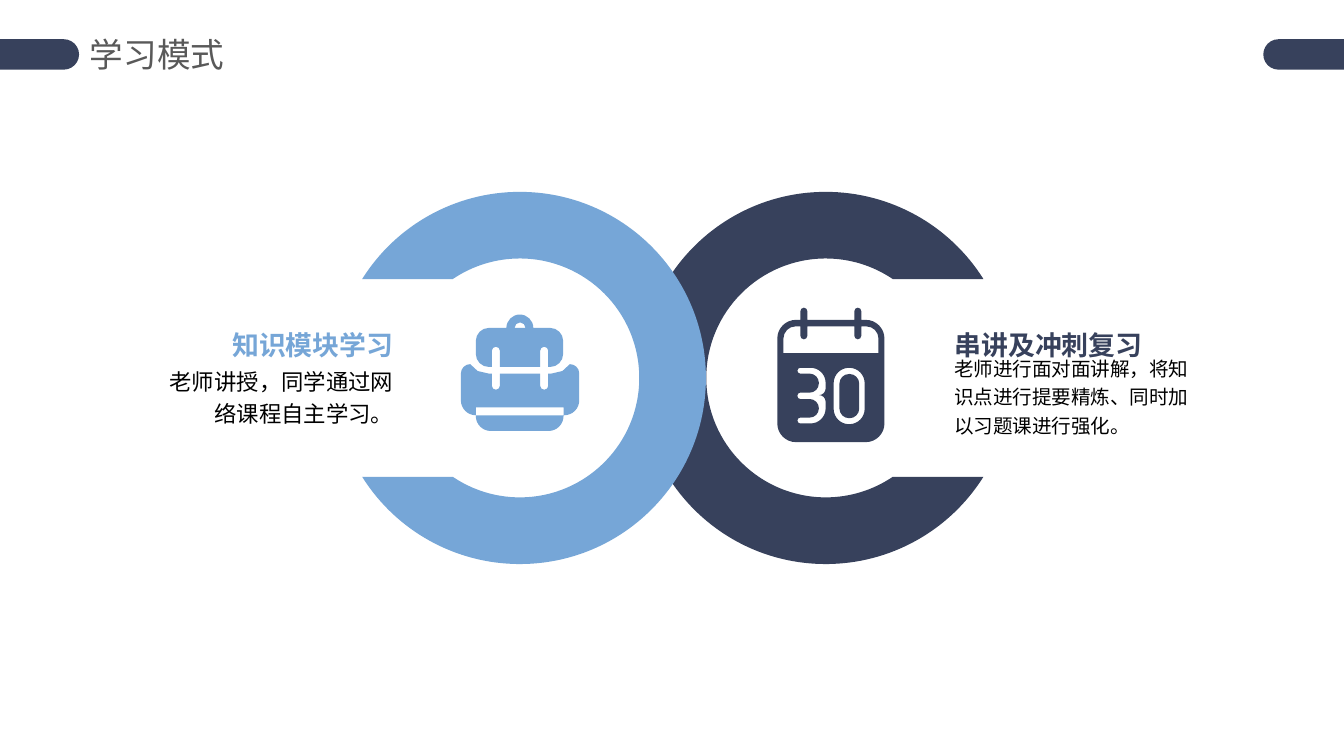
import math

from lxml import etree
from pptx import Presentation
from pptx.dml.color import RGBColor
from pptx.enum import shapes, text
from pptx.oxml import ns
from pptx.util import Pt

NAVY = RGBColor(0x37, 0x41, 0x5C)
BLUE = RGBColor(0x76, 0xA6, 0xD7)
GRAY = RGBColor(0x59, 0x59, 0x59)
BLACK = RGBColor(0, 0, 0)
FONT = "Noto Sans CJK SC"
LEFT, RIGHT = text.PP_ALIGN.LEFT, text.PP_ALIGN.RIGHT

OUTER_R, INNER_R, HALF_GAP = 99.7, 64, 53
KAPPA = 0.55  # handle length of a quarter circle

# Icon outlines: corners as (x, y, corner radius), in points from the icon's top left
CALENDAR = [
    # page with two binding posts
    [(0, 6.5, 10), (12.4, 6.5, 0), (12.4, 0, 1.8), (16.1, 0, 1.8), (16.1, 6.5, 0),
     (41.3, 6.5, 0), (41.3, 0, 1.8), (45, 0, 1.8), (45, 6.5, 0),
     (57.4, 6.5, 10), (57.4, 72, 10), (0, 72, 10)],
    # header window
    [(3.3, 24.3, 0), (3.3, 10, 6.5), (12.4, 10, 0), (12.4, 16.9, 1.8), (16.1, 16.9, 1.8),
     (16.1, 10, 0), (41.3, 10, 0), (41.3, 16.9, 1.8), (45, 16.9, 1.8), (45, 10, 0),
     (54.2, 10, 6.5), (54.2, 24.3, 0)],
    # digit 3
    [(10.8, 32.2, 1.5), (25.9, 32.2, 8), (25.9, 46.8, 3.5),
     (25.9, 46.8, 3.5), (25.9, 62, 8), (10.8, 62, 1.5), (10.8, 58.9, 1.5),
     (22.3, 58.9, 5), (22.3, 48.9, 5), (10.8, 48.9, 1.5), (10.8, 45.5, 1.5),
     (22.3, 45.5, 5), (22.3, 35.3, 5), (10.8, 35.3, 1.5)],
    # digit 0
    [(30.2, 32.2, 8.2), (46.8, 32.2, 8.2), (46.8, 62.4, 8.2), (30.2, 62.4, 8.2)],
    [(33.3, 35.5, 5.2), (43.9, 35.5, 5.2), (43.9, 59.2, 5.2), (33.3, 59.2, 5.2)],
]
CALENDAR[2].insert(3, (22.4, 46.8, 0))  # waist between the bowls of the 3
BACKPACK = [
    # flap with handle and strap slots
    [(8, 7.2, 7), (24.4, 7.2, 0), (24.4, 0, 7.2), (38.8, 0, 7.2), (38.8, 7.2, 0),
     (54.8, 7.2, 7), (54.8, 28.1, 7), (46.8, 28.1, 0), (46.8, 17.3, 2.1),
     (42.5, 17.3, 2.1), (42.5, 28.1, 0), (20.9, 28.1, 0), (20.9, 17.3, 2.1),
     (16.6, 17.3, 2.1), (16.6, 28.1, 0), (8, 28.1, 7)],
    # handle hole
    [(28.8, 4.3, 2.8), (34.6, 4.3, 2.8), (34.6, 7.2, 0), (28.8, 7.2, 0)],
    # body with strap ends
    [(0, 26.6, 5), (5, 26.6, 0), (9, 30.3, 0), (15.1, 31.7, 0), (16.6, 31.7, 0),
     (16.6, 40.3, 2.1), (20.9, 40.3, 2.1), (20.9, 31.7, 0), (42.5, 31.7, 0),
     (42.5, 40.3, 2.1), (46.8, 40.3, 2.1), (46.8, 31.7, 0), (48.3, 31.7, 0),
     (54.4, 30.3, 0), (58.4, 26.6, 0), (63.4, 26.6, 5), (63.4, 54, 8),
     (55, 54, 0), (55, 49.7, 0), (8, 49.7, 0), (8, 54, 0), (0, 54, 8)],
    # pocket
    [(8, 54, 0), (55, 54, 0), (55, 62.4, 8), (8, 62.4, 8)],
]


def paint(sp, color):
    sp.fill.solid()
    sp.fill.fore_color.rgb = color
    sp.line.fill.background()
    sp.shadow.inherit = False


def add_outline(s, contours, x, y, color):
    """Draw closed contours as one shape; a node is [end] or [handle, handle, end]."""
    paths = [[[(Pt(x + px), Pt(y + py)) for px, py in node] for node in c] for c in contours]
    fb = s.shapes.build_freeform(*paths[0][0][-1], scale=1.0)
    for i, path in enumerate(paths):
        if i:
            fb.move_to(*path[0][-1])
        fb.add_line_segments([node[-1] for node in path[1:]])
    sp = fb.convert_to_shape()
    # Turn the line segments that have handles into curves
    lines = list(sp._element.iter(ns.qn("a:lnTo")))
    for line, node in zip(lines, [node for path in paths for node in path[1:]]):
        if len(node) == 3:
            line.tag = ns.qn("a:cubicBezTo")
            for k, (hx, hy) in enumerate(node[:2]):
                pt = etree.Element(ns.qn("a:pt"), x=str(hx - sp.left), y=str(hy - sp.top))
                line.insert(k, pt)
    paint(sp, color)


def round_corners(corners):
    """Turn each right-angled corner that has a radius into a quarter curve."""
    nodes = []
    for i, (x, y, r) in enumerate(corners):
        if not r:
            nodes.append([(x, y)])
            continue

        def toward(other, length):
            t = length / math.dist((x, y), other[:2])
            return x + (other[0] - x) * t, y + (other[1] - y) * t

        before, after = corners[i - 1], corners[(i + 1) % len(corners)]
        if before[:2] == (x, y):
            before = corners[i - 2]
        h = r * (1 - KAPPA)
        nodes.append([toward(before, r)])
        nodes.append([toward(before, h), toward(after, h), toward(after, r)])
    return nodes


def ring_nodes(side):
    """Ring around (0, 0), open to the left (side -1) or right (side 1)."""
    def arc(radius, turn):
        end = math.pi - math.asin(HALF_GAP / radius)
        angles = [turn * t for t in (-end, -math.pi / 2, 0, math.pi / 2, end)]

        def at(t, along=0):
            return (-side * radius * (math.cos(t) - along * math.sin(t)),
                    radius * (math.sin(t) + along * math.cos(t)))

        nodes = [[at(angles[0])]]
        for a, b in zip(angles, angles[1:]):
            h = 4 / 3 * math.tan((b - a) / 4)
            nodes.append([at(a, h), at(b, -h), at(b)])
        return nodes
    return arc(OUTER_R, 1) + arc(INNER_R, -1)


def add_text(s, content, box, size, color, bold=False, align=LEFT, wrap=True,
             anchor=text.MSO_ANCHOR.MIDDLE, spacing=None, inset=(5.8, 0)):
    tf = s.shapes.add_textbox(*map(Pt, box)).text_frame
    tf.word_wrap = wrap
    tf.vertical_anchor = anchor
    tf.margin_left = tf.margin_right = Pt(inset[0])
    tf.margin_top = tf.margin_bottom = Pt(inset[1])
    p = tf.paragraphs[0]
    p.alignment = align
    if spacing:
        p.line_spacing = spacing
    r = p.add_run()
    r.text = content
    r.font.name, r.font.size, r.font.bold = FONT, Pt(size), bold
    r.font.color.rgb = color
    etree.SubElement(r.font._element, ns.qn("a:ea"), typeface=FONT)  # East Asian typeface


def add_mode(s, box, side, color, icon, icon_at, text_w, heading, body, body_size):
    """Group: open ring with an icon at the inner end, text at the outer end."""
    x, y, w, h = box
    cx = x + OUTER_R if side > 0 else x + w - OUTER_R
    cy = y + h / 2
    text_x = x + w - text_w if side > 0 else x
    align = LEFT if side > 0 else RIGHT
    g = s.shapes.add_group_shape()
    add_outline(g, [ring_nodes(side)], cx, cy, color)
    add_outline(g, [round_corners(c) for c in icon], cx + icon_at[0], cy + icon_at[1], color)
    add_text(g, body, (text_x, y + 91.4, text_w, 34.6), body_size, BLACK,
             align=align, spacing=1.2)
    add_text(g, heading, (text_x, y + 73.2, text_w, 14.4), 14.4, color, bold=True,
             align=align, wrap=False, anchor=text.MSO_ANCHOR.TOP)


def add_header(s, box):
    """Title between two tabs that run off the slide's edges."""
    x, y, w, h = box
    add_text(s, "学习模式", (x + 48.2, y, 167.8, h), 18, GRAY, inset=(0, 3.6))
    for tab_x in (x - 20.2, x + w - 43.2):
        sp = s.shapes.add_shape(shapes.MSO_SHAPE.ROUNDED_RECTANGLE,
                                Pt(tab_x), Pt(y + 7.3), Pt(62.6), Pt(16.3))
        sp.adjustments[0] = 0.5
        paint(sp, NAVY)


def main():
    prs = Presentation()
    prs.slide_width, prs.slide_height = Pt(720), Pt(405)
    s = prs.slides.add_slide(prs.slide_layouts[6])
    add_mode(s, (342.7, 102.8, 308.2, 199.4), 1, NAVY, CALENDAR, (-26, -37.6), 145.4,
             "串讲及冲刺复习", "老师进行面对面讲解，将知识点进行提要精炼、同时加以习题课进行强化。", 10.5)
    add_mode(s, (74.2, 102.8, 304, 199.4), -1, BLUE, BACKPACK, (-31.6, -34), 142.4,
             "知识模块学习", "老师讲授，同学通过网络课程自主学习。", 12)
    add_header(s, (0, 13.7, 720, 30.2))
    prs.save("out.pptx")


if __name__ == "__main__":
    main()
